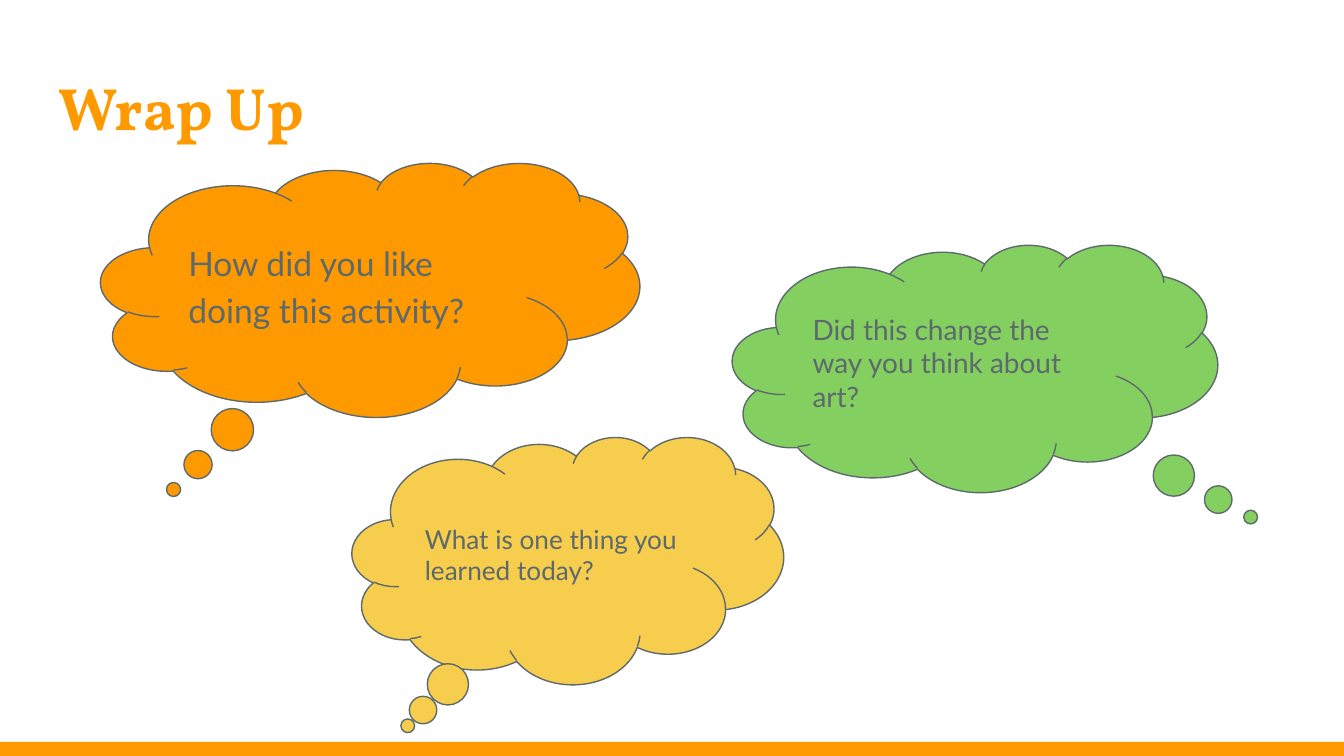
from dataclasses import dataclass

from pptx import Presentation
from pptx.dml.color import RGBColor
from pptx.enum.shapes import MSO_SHAPE
from pptx.enum.text import MSO_ANCHOR, PP_ALIGN
from pptx.util import Inches, Pt


@dataclass(frozen=True)
class Theme:
    orange: str = "FF9900"
    green: str = "83D061"
    yellow: str = "F6CD4C"
    gray: str = "5E696C"
    title_font: str = "Vollkorn"
    body_font: str = "Lato"
    title_size: float = 32
    large_size: float = 18
    medium_size: float = 15
    small_size: float = 14
    outline: float = 0.75


THEME = Theme()


@dataclass(frozen=True)
class Bubble:
    text: str
    left: float
    top: float
    width: float
    height: float
    tail: tuple[float, float]
    color: str
    size: float
    line_spacing: float = 1.0
    space_after: float = 0


BUBBLES = [
    Bubble("How did you like doing this activity?", 0.75, 1.21, 4.01, 1.89,
           (-0.365, 0.787), THEME.orange, THEME.large_size, 1.15, 16),
    Bubble("Did this change the way you think about art?", 5.45, 1.82, 3.61, 1.84,
           (0.568, 0.602), THEME.green, THEME.medium_size),
    Bubble("What is one thing you learned today?", 2.62, 3.25, 3.21, 1.84,
           (-0.371, 0.669), THEME.yellow, THEME.small_size),
]


def write_text(shape, text: str, *, font: str, size: float, color: str,
               bold: bool = False, anchor=MSO_ANCHOR.TOP,
               line_spacing: float = 1.0, space_after: float = 0) -> None:
    frame = shape.text_frame
    frame.word_wrap = True
    frame.vertical_anchor = anchor
    frame.margin_left = frame.margin_right = Inches(0.1)
    frame.margin_top = frame.margin_bottom = Inches(0.1)
    paragraph = frame.paragraphs[0]
    paragraph.alignment = PP_ALIGN.LEFT
    paragraph.line_spacing = line_spacing
    paragraph.space_after = Pt(space_after)
    run = paragraph.add_run()
    run.text = text
    run.font.name = font
    run.font.size = Pt(size)
    run.font.bold = bold
    run.font.color.rgb = RGBColor.from_string(color)


def add_filled_shape(slide, kind: MSO_SHAPE, left: float, top: float,
                     width: float, height: float, color: str):
    shape = slide.shapes.add_shape(
        kind, Inches(left), Inches(top), Inches(width), Inches(height))
    shape.shadow.inherit = False
    shape.fill.solid()
    shape.fill.fore_color.rgb = RGBColor.from_string(color)
    shape.line.fill.background()
    return shape


def add_bubble(slide, bubble: Bubble) -> None:
    shape = add_filled_shape(slide, MSO_SHAPE.CLOUD_CALLOUT, bubble.left, bubble.top,
                             bubble.width, bubble.height, bubble.color)
    shape.adjustments[0], shape.adjustments[1] = bubble.tail
    shape.line.color.rgb = RGBColor.from_string(THEME.gray)
    shape.line.width = Pt(THEME.outline)
    write_text(shape, bubble.text, font=THEME.body_font, size=bubble.size,
               color=THEME.gray, anchor=MSO_ANCHOR.MIDDLE,
               line_spacing=bubble.line_spacing, space_after=bubble.space_after)


def main() -> None:
    presentation = Presentation()
    presentation.slide_width = Inches(10)
    presentation.slide_height = Inches(5.625)
    slide = presentation.slides.add_slide(presentation.slide_layouts[6])

    # Footer bar
    add_filled_shape(slide, MSO_SHAPE.RECTANGLE, 0, 5.52, 10, 0.11, THEME.orange)

    # Title
    title = slide.shapes.add_textbox(
        Inches(0.34), Inches(0.43), Inches(9.32), Inches(0.68))
    write_text(title, "Wrap Up", font=THEME.title_font, size=THEME.title_size,
               color=THEME.orange, bold=True)

    # Thought bubbles
    for bubble in BUBBLES:
        add_bubble(slide, bubble)

    presentation.save("out.pptx")


if __name__ == "__main__":
    main()
